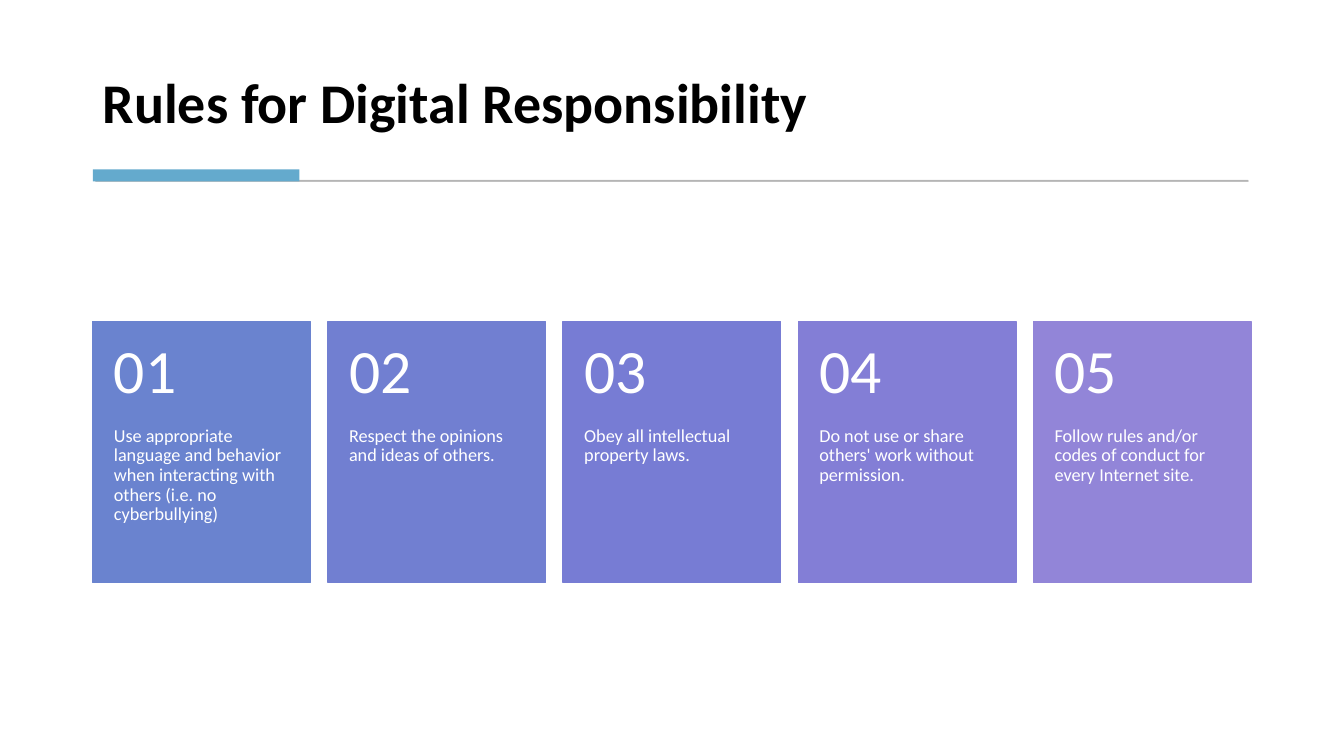
"""Build the slide listing five numbered rules for digital responsibility."""
from dataclasses import dataclass

from lxml import etree
from pptx import Presentation
from pptx.dml.color import RGBColor
from pptx.enum.shapes import MSO_SHAPE
from pptx.enum.text import MSO_ANCHOR
from pptx.oxml.ns import qn
from pptx.util import Inches, Pt

RECT = MSO_SHAPE.RECTANGLE
TOP, MIDDLE, BOTTOM = MSO_ANCHOR.TOP, MSO_ANCHOR.MIDDLE, MSO_ANCHOR.BOTTOM


@dataclass(frozen=True)
class Theme:
    font: str = "Calibri"
    title: str = "000000"
    text: str = "FFFFFF"
    rule: str = "595959"
    accent: str = "64AACD"
    cards: tuple = ("6A83CF", "717FD1", "777CD4", "837ED6", "9285D8")
    title_size: int = 40
    number_size: int = 44
    body_size: int = 13


theme = Theme()
rules = [
    "Use appropriate language and behavior when interacting with others (i.e. no cyberbullying)",
    "Respect the opinions and ideas of others.",
    "Obey all intellectual property laws.",
    "Do not use or share others' work without permission.",
    "Follow rules and/or codes of conduct for every Internet site.",
]

prs = Presentation()
prs.slide_width, prs.slide_height = Inches(13.33), Inches(7.5)
s = prs.slides.add_slide(prs.slide_layouts[6])


def add_rect(x, y, w, h, color, line_width=0):
    sp = s.shapes.add_shape(RECT, Inches(x), Inches(y), Inches(w), Inches(h))
    sp.shadow.inherit = False
    sp.fill.solid()
    sp.fill.fore_color.rgb = RGBColor.from_string(color)
    if line_width:
        sp.line.color.rgb = RGBColor.from_string(color)
        sp.line.width = Pt(line_width)
    else:
        sp.line.fill.background()
    return sp


def add_text(x, y, w, h, text, size, color, anchor, insets, bold=False):
    sp = s.shapes.add_textbox(Inches(x), Inches(y), Inches(w), Inches(h))
    tf = sp.text_frame
    tf.word_wrap = True
    tf.vertical_anchor = anchor
    tf.margin_left, tf.margin_top, tf.margin_right, tf.margin_bottom = map(Inches, insets)
    p = tf.paragraphs[0]
    p.line_spacing = 0.9
    r = p.add_run()
    r.text = text
    r.font.name = theme.font
    r.font.size = Pt(size)
    r.font.bold = bold
    r.font.color.rgb = RGBColor.from_string(color)


left, width = 0.92, 11.49
add_text(left, 0.28, width, 1.11, "Rules for Digital Responsibility", theme.title_size,
         theme.title, BOTTOM, (0.1, 0.05, 0.1, 0.05), bold=True)

title_rule = add_rect(0.95, 1.79, 11.43, 0.01, theme.rule, 0.75)
for color in title_rule._element.spPr.iter(qn("a:srgbClr")):
    etree.SubElement(color, qn("a:alpha")).set("val", "30000")
add_rect(left, 1.68, 2.05, 0.12, theme.accent)

card_top, card_w, card_h, number_h = 3.19, 2.16, 2.59, 1.04
pitch = (width - card_w) / (len(rules) - 1)
for i, (rule, color) in enumerate(zip(rules, theme.cards)):
    x = left + i * pitch
    add_rect(x, card_top, card_w, card_h, color, 1)
    add_text(x, card_top + number_h, card_w, card_h - number_h, rule, theme.body_size,
             theme.text, TOP, (0.21, 0, 0.21, 0.36))
    add_text(x, card_top, card_w, number_h, f"{i + 1:02d}", theme.number_size,
             theme.text, MIDDLE, (0.21, 0.18, 0.21, 0.18))

prs.save("out.pptx")
